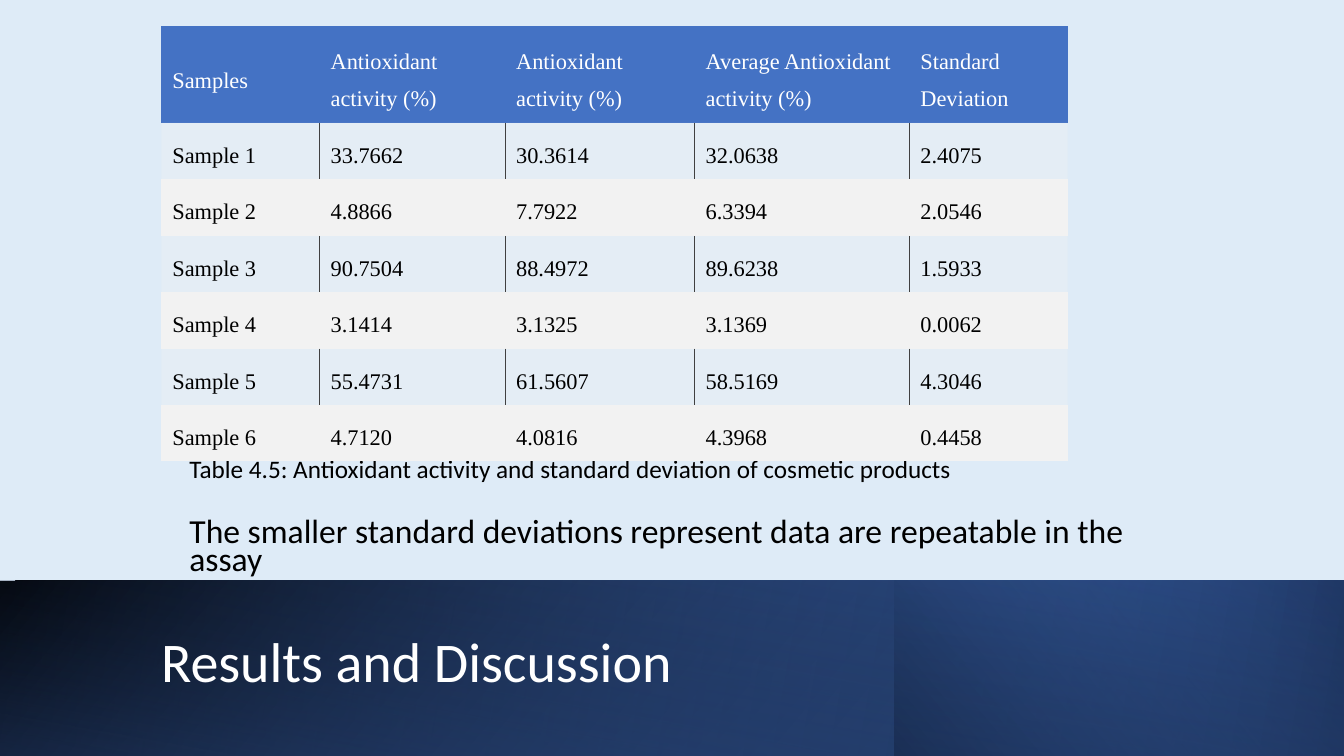
"""Build the antioxidant results slide: table, caption, finding and title band."""
from lxml import etree
from pptx import Presentation
from pptx.dml.color import RGBColor
from pptx.enum import shapes, text
from pptx.oxml import parse_xml
from pptx.oxml.ns import nsdecls, qn
from pptx.util import Inches, Pt

THEME = {
    "background": "DEEBF7", "blue": "4472C4", "navy": "203864", "black": "000000",
    "white": "FFFFFF", "row": "F2F2F2", "rule": "404040",
    "body_font": "Calibri", "table_font": "Times New Roman",
    "title_size": 40, "finding_size": 24, "caption_size": 18, "table_size": 16,
}
TITLE = "Results and Discussion"
CAPTION = "Table 4.5: Antioxidant activity and standard deviation of cosmetic products"
FINDING = "The smaller standard deviations represent data are repeatable in the assay"
HEADER = ("Samples", "Antioxidant activity (%)", "Antioxidant activity (%)",
          "Average Antioxidant activity (%)", "Standard Deviation")
RESULTS = [
    ("Sample 1", "33.7662", "30.3614", "32.0638", "2.4075"),
    ("Sample 2", "4.8866", "7.7922", "6.3394", "2.0546"),
    ("Sample 3", "90.7504", "88.4972", "89.6238", "1.5933"),
    ("Sample 4", "3.1414", "3.1325", "3.1369", "0.0062"),
    ("Sample 5", "55.4731", "61.5607", "58.5169", "4.3046"),
    ("Sample 6", "4.7120", "4.0816", "4.3968", "0.4458"),
]
COLUMN_WIDTHS = (1.57, 1.84, 1.88, 2.13, 1.57)
HEADER_HEIGHT, ROW_HEIGHT = 0.75, 0.46
SLIDE_WIDTH, SLIDE_HEIGHT = 13.33, 7.5
BAND_TOP, BAND_HEIGHT = 5.76, 1.74
NO_TABLE_STYLE = "{2D5ABB26-0587-4C30-8999-92F81FD0307C}"

# left, width, rotation, angle, stops of (position, colour, opacity)
BAND_LAYERS = [
    (0, SLIDE_WIDTH, 0, 140, [(0, "black", 100), (100, "blue", 100)]),
    (0, SLIDE_WIDTH, 0, 170, [(0, "blue", 0), (100, "navy", 100)]),
    (8.87, 4.46, 0, 220, [(0, "navy", 100), (100, "blue", 0)]),
    (-0.01, SLIDE_WIDTH, 180, 280, [(0, "black", 0), (99, "navy", 55)]),
]


def colour(name):
    return RGBColor.from_string(THEME[name])


def style(paragraph, size, ink, font, spacing):
    paragraph.line_spacing = spacing
    for run in paragraph.runs:
        run.font.size = Pt(THEME[size])
        run.font.name = THEME[font]
        run.font.color.rgb = colour(ink)


def add_band_layer(slide, left, width, rotation, angle, stops):
    layer = slide.shapes.add_shape(
        shapes.MSO_SHAPE.RECTANGLE, Inches(left), Inches(BAND_TOP),
        Inches(width), Inches(BAND_HEIGHT))
    layer.shadow.inherit = False
    layer.line.fill.background()
    layer.rotation = rotation
    properties = layer.element.spPr
    if not rotation:
        properties.find(qn("a:xfrm")).set("flipH", "1")
    stop_xml = "".join(
        f'<a:gs pos="{position * 1000}"><a:srgbClr val="{THEME[name]}">'
        f'<a:alpha val="{opacity * 1000}"/></a:srgbClr></a:gs>'
        for position, name, opacity in stops)
    gradient = parse_xml(
        f'<a:gradFill {nsdecls("a")} rotWithShape="1"><a:gsLst>{stop_xml}</a:gsLst>'
        f'<a:lin ang="{angle * 60000}" scaled="0"/></a:gradFill>')
    properties.find(qn("a:prstGeom")).addnext(gradient)


def add_text(slide, left, top, width, height, anchor, lines):
    frame = slide.shapes.add_textbox(
        Inches(left), Inches(top), Inches(width), Inches(height)).text_frame
    frame.word_wrap = True
    frame.vertical_anchor = anchor
    frame.text = "\n".join(words for words, *_ in lines)
    for paragraph, (_, size, ink, spacing, after) in zip(frame.paragraphs, lines):
        style(paragraph, size, ink, "body_font", spacing)
        paragraph.space_after = Pt(after)


def add_rules(cell, sides):
    for index, side in enumerate(sides):
        rule = parse_xml(
            f'<a:ln{side} {nsdecls("a")} w="6350"><a:solidFill>'
            f'<a:srgbClr val="{THEME["rule"]}"/></a:solidFill></a:ln{side}>')
        cell._tc.get_or_add_tcPr().insert(index, rule)


def fill_cell(cell, words, row, column):
    is_header, is_tinted = row == 0, row % 2 == 1
    cell.text = words
    cell.margin_left, cell.margin_right = Inches(0.11), Inches(0.04)
    cell.margin_top = cell.margin_bottom = Inches(0.08)
    cell.vertical_anchor = text.MSO_ANCHOR.MIDDLE if is_header else text.MSO_ANCHOR.TOP
    style(cell.text_frame.paragraphs[0], "table_size",
          "white" if is_header else "black", "table_font", 1.5)
    cell.fill.solid()
    cell.fill.fore_color.rgb = colour("blue" if is_header else "row")
    if is_tinted:
        tint = cell._tc.tcPr.find(qn("a:solidFill")).find(qn("a:srgbClr"))
        etree.SubElement(tint, qn("a:alpha")).set("val", "30000")
        add_rules(cell, ("L" if column > 0 else "")
                  + ("R" if column < len(HEADER) - 1 else ""))


def add_results(slide):
    rows = [HEADER] + RESULTS
    heights = [HEADER_HEIGHT] + [ROW_HEIGHT] * len(RESULTS)
    table = slide.shapes.add_table(
        len(rows), len(HEADER), Inches(1.6), Inches(0.26),
        Inches(sum(COLUMN_WIDTHS)), Inches(sum(heights))).table
    table.first_row = table.horz_banding = False
    table._tbl.tblPr.find(qn("a:tableStyleId")).text = NO_TABLE_STYLE
    for column, width in zip(table.columns, COLUMN_WIDTHS):
        column.width = Inches(width)
    for row, (values, height) in enumerate(zip(rows, heights)):
        table.rows[row].height = Inches(height)
        for column, words in enumerate(values):
            fill_cell(table.cell(row, column), words, row, column)


def main():
    deck = Presentation()
    deck.slide_width, deck.slide_height = Inches(SLIDE_WIDTH), Inches(SLIDE_HEIGHT)
    slide = deck.slides.add_slide(deck.slide_layouts[6])
    slide.background.fill.solid()
    slide.background.fill.fore_color.rgb = colour("background")
    for layer in BAND_LAYERS:
        add_band_layer(slide, *layer)
    add_text(slide, 1.5, 6.03, 10.82, 1.13, text.MSO_ANCHOR.MIDDLE,
             [(TITLE, "title_size", "white", 0.9, 0)])
    add_text(slide, 1.78, 4.53, 10.01, 1.25, text.MSO_ANCHOR.TOP,
             [(CAPTION, "caption_size", "black", 0.7, 27),
              (FINDING, "finding_size", "black", 0.7, 6)])
    add_results(slide)
    deck.save("out.pptx")


if __name__ == "__main__":
    main()
